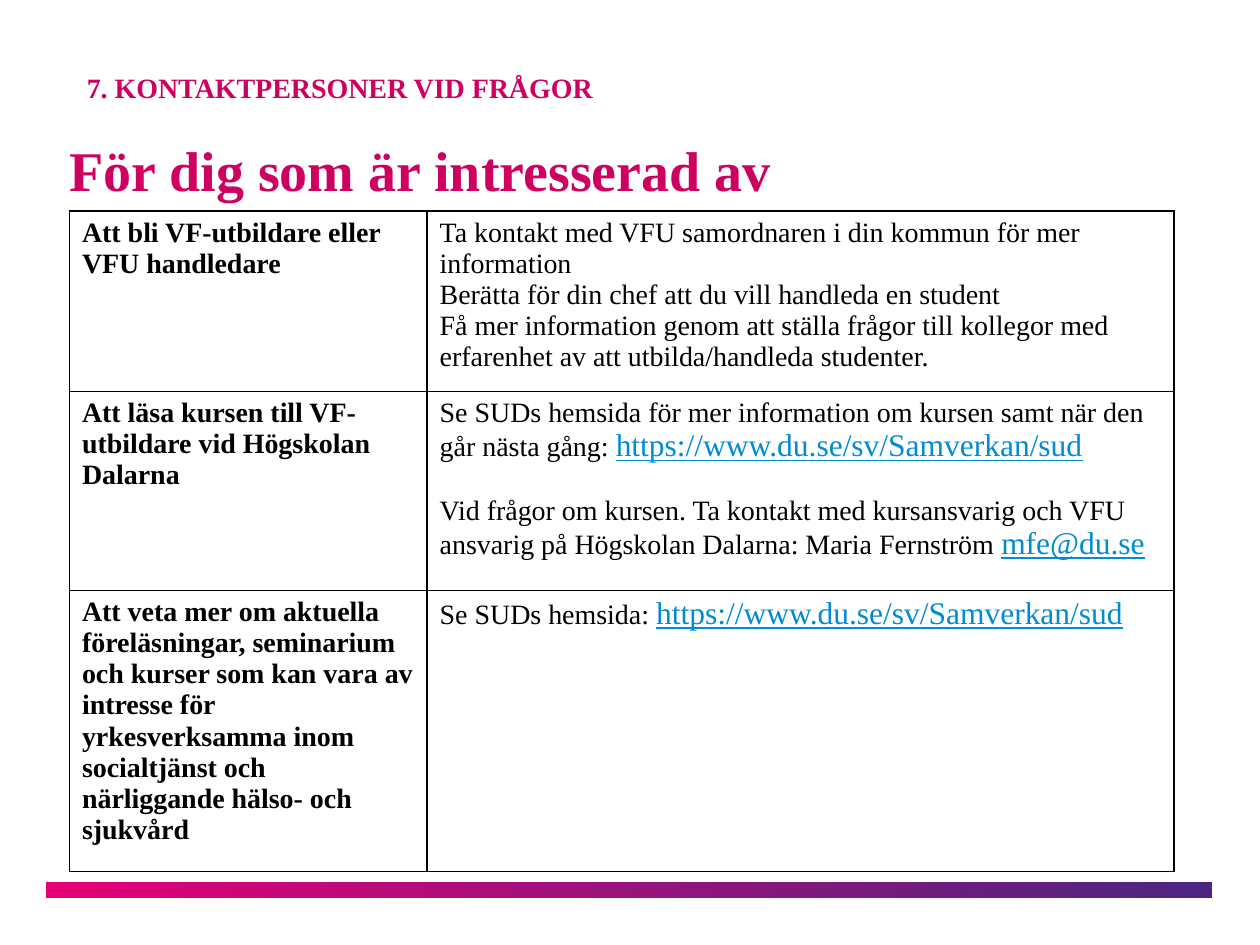
import pptx
import pptx.util
import pptx.dml.color
import pptx.enum.shapes
import pptx.enum.text
import pptx.oxml
import pptx.oxml.ns

Cm, Pt = pptx.util.Cm, pptx.util.Pt

HUES = {"rose": "CE0060", "pink": "E50076", "plum": "4B2582",
        "link": "008BD2", "ink": "000000", "page": "FFFFFF"}
SITE = "https://www.du.se/sv/Samverkan/sud"


def hue(name):
    return pptx.dml.color.RGBColor.from_string(HUES[name])


class Deck:
    """Holds the style and the current slide."""
    font = "Times New Roman"

    def __init__(self, wide, high):
        self.show = pptx.Presentation()
        self.show.slide_width, self.show.slide_height = Cm(wide), Cm(high)
        self.slide = self.show.slides.add_slide(self.show.slide_layouts[6])

    def run(self, para, text, size=16, color="ink", bold=False, line=False):
        run = para.add_run()
        run.text = text
        font = run.font
        font.name, font.size, font.bold = self.font, Pt(size), bold
        font.underline = line
        font.color.rgb = hue(color)

    def bar(self, box):
        shape = self.slide.shapes.add_shape(
            pptx.enum.shapes.MSO_SHAPE.RECTANGLE, *map(Cm, box))
        shape.shadow.inherit = False
        shape.line.fill.background()
        shape.fill.gradient()
        shape.fill.gradient_angle = 0
        for stop, name in zip(shape.fill.gradient_stops, ("pink", "plum")):
            stop.color.rgb = hue(name)

    def head(self, box, text, size, space):
        frame = self.slide.shapes.add_textbox(*map(Cm, box)).text_frame
        frame.word_wrap = True
        frame.vertical_anchor = pptx.enum.text.MSO_ANCHOR.TOP
        frame.margin_left = frame.margin_right = 0
        frame.margin_top = frame.margin_bottom = 0
        para = frame.paragraphs[0]
        para.line_spacing = space
        self.run(para, text, size, "rose", bold=True)

    def edge(self, cell):
        props = cell._tc.get_or_add_tcPr()
        space = pptx.oxml.ns.nsdecls("a")
        for at, side in enumerate(("lnL", "lnR", "lnT", "lnB")):
            props.insert(at, pptx.oxml.parse_xml(
                f'<a:{side} {space} w="12700"><a:solidFill>'
                f'<a:srgbClr val="{HUES["ink"]}"/></a:solidFill></a:{side}>'))

    def cell(self, cell, paras, bold, gap):
        cell.fill.solid()
        cell.fill.fore_color.rgb = hue("page")
        self.edge(cell)
        frame = cell.text_frame
        for at, (text, link) in enumerate(paras):
            para = frame.add_paragraph() if at else frame.paragraphs[0]
            if at and gap:
                para.space_before = Pt(gap)
            self.run(para, text, bold=bold)
            if link:
                self.run(para, link, 18, "link", line=True)

    def table(self, box, cols, rows):
        table = self.slide.shapes.add_table(
            len(rows), len(cols), *map(Cm, box)).table
        table.first_row = table.horz_banding = False
        for col, wide in zip(table.columns, cols):
            col.width = Cm(wide)
        for at, (high, topic, paras, gap) in enumerate(rows):
            table.rows[at].height = Cm(high)
            self.cell(table.cell(at, 0), [(topic, None)], True, 0)
            self.cell(table.cell(at, 1), paras, False, gap)


# Row height, topic, (text, link) paragraphs, gap between paragraphs
ROWS = [
    (3.38, "Att bli VF-utbildare eller VFU handledare", [
        ("Ta kontakt med VFU samordnaren i din kommun för mer information",
         None),
        ("Berätta för din chef att du vill handleda en student", None),
        ("Få mer information genom att ställa frågor till kollegor med "
         "erfarenhet av att utbilda/handleda studenter.", None)], 0),
    (4.01, "Att läsa kursen till VF-utbildare vid Högskolan Dalarna", [
        ("Se SUDs hemsida för mer information om kursen samt när den går "
         "nästa gång: ", SITE),
        ("Vid frågor om kursen. Ta kontakt med kursansvarig och VFU ansvarig "
         "på Högskolan Dalarna: Maria Fernström ", "mfe@du.se")], 18),
    (5.28, "Att veta mer om aktuella föreläsningar, seminarium och kurser "
           "som kan vara av intresse för yrkesverksamma inom socialtjänst "
           "och närliggande hälso- och sjukvård", [
               ("Se SUDs hemsida: ", SITE)], 0),
]


def main():
    deck = Deck(25.4, 19.05)
    # Bottom bar
    deck.bar((0.92, 17.78, 23.52, 0.33))
    # Headings
    deck.head((1.4, 2.6, 18.95, 2.03), "För dig som är intresserad av", 32, 1.1)
    deck.head((1.75, 1.5, 18.95, 1.45), "7. KONTAKTPERSONER VID FRÅGOR", 16, 0.9)
    # Contact table
    deck.table((1.4, 4.25, 22.27, 12.67), (7.21, 15.06), ROWS)
    deck.show.save("out.pptx")


if __name__ == "__main__":
    main()
